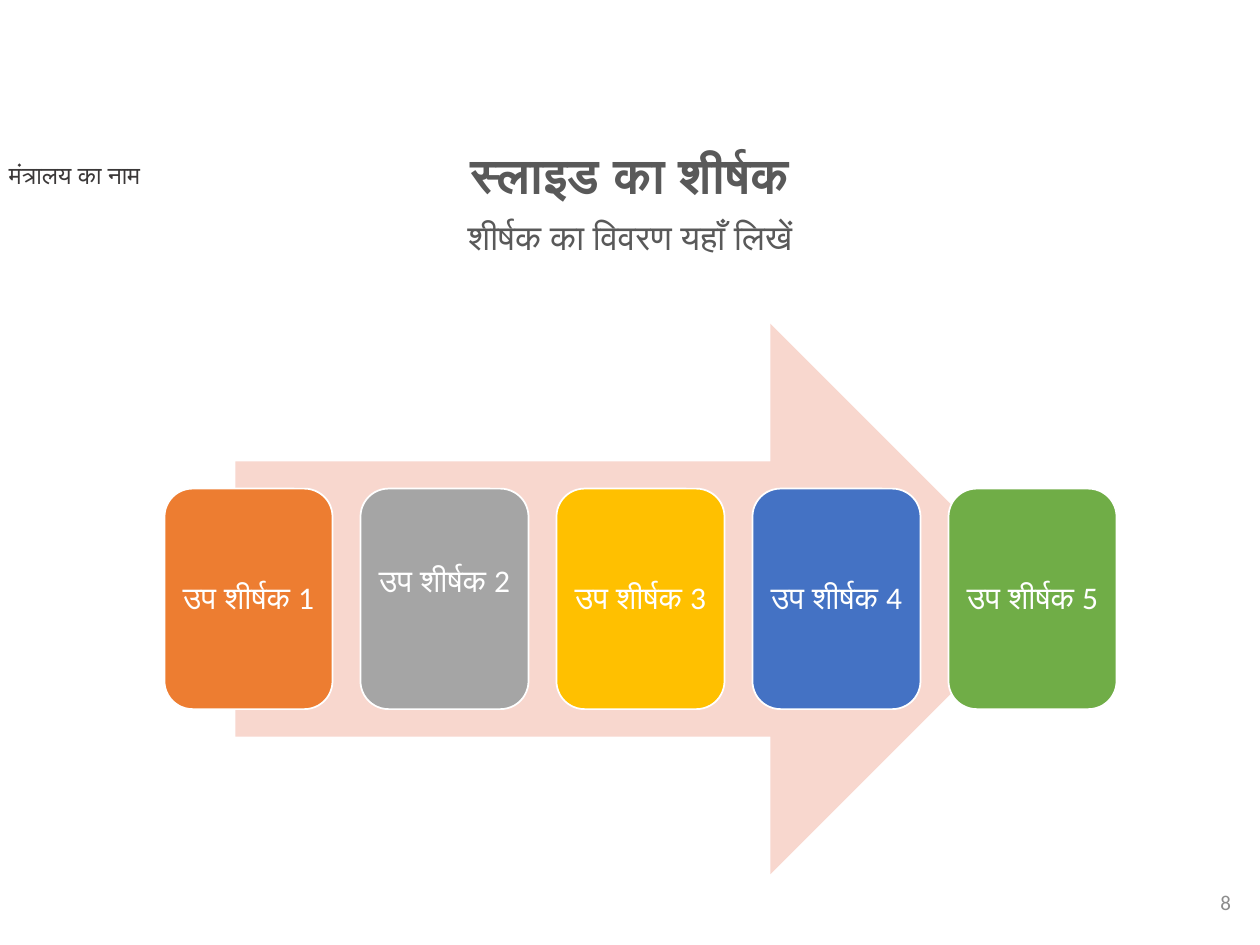
from pptx import Presentation
from pptx.dml.color import RGBColor
from pptx.enum import shapes, text
from pptx.util import Pt

WHITE = RGBColor(0xFF, 0xFF, 0xFF)
GREY = RGBColor(0x59, 0x59, 0x59)
DARK = RGBColor(0x3B, 0x38, 0x38)
PALE = RGBColor(0x8C, 0x8C, 0x8C)
PINK = RGBColor(0xF8, 0xD7, 0xCE)
FILLS = [
    RGBColor(0xED, 0x7D, 0x31),
    RGBColor(0xA5, 0xA5, 0xA5),
    RGBColor(0xFF, 0xC0, 0x00),
    RGBColor(0x44, 0x72, 0xC4),
    RGBColor(0x70, 0xAD, 0x47),
]
LEFT, CENTER, RIGHT = text.PP_ALIGN.LEFT, text.PP_ALIGN.CENTER, text.PP_ALIGN.RIGHT
TOP, MIDDLE = text.MSO_ANCHOR.TOP, text.MSO_ANCHOR.MIDDLE


def write(shape, words, size, color, align, anchor=TOP, space=1.0, bold=False):
    frame = shape.text_frame
    frame.text = words
    frame.word_wrap = True
    frame.auto_size = text.MSO_AUTO_SIZE.NONE
    frame.vertical_anchor = anchor
    para = frame.paragraphs[0]
    para.alignment = align
    para.line_spacing = space
    para.space_before = Pt(0)
    font = para.runs[0].font
    font.name = "Calibri"
    font.size = Pt(size)
    font.bold = bold
    font.color.rgb = color
    return frame


deck = Presentation()
deck.slide_width, deck.slide_height = Pt(720), Pt(540)
slide = deck.slides.add_slide(deck.slide_layouts[5])
items = slide.shapes

title = items.title
title.left, title.top, title.width, title.height = Pt(133.6), Pt(82.8), Pt(452.8), Pt(34)
write(title, "स्लाइड का शीर्षक", 28, GREY, CENTER, space=0.9, bold=True)

label = items.add_textbox(Pt(-2), Pt(88), Pt(157), Pt(24.5))
write(label, "मंत्रालय का नाम", 14, DARK, LEFT)

detail = items.add_textbox(Pt(105), Pt(122.4), Pt(510), Pt(45.4))
write(detail, "शीर्षक का विवरण यहाँ लिखें", 20, GREY, CENTER, space=0.9)

number = items.add_textbox(Pt(548.6), Pt(501), Pt(162), Pt(28.8))
write(number, "8", 12, PALE, RIGHT, MIDDLE)

arrow = items.add_shape(
    shapes.MSO_SHAPE.RIGHT_ARROW, Pt(134.5), Pt(185), Pt(463), Pt(314.6)
)
arrow.shadow.inherit = False
arrow.fill.solid()
arrow.fill.fore_color.rgb = PINK
arrow.line.fill.background()

for i, fill in enumerate(FILLS):
    card = items.add_shape(
        shapes.MSO_SHAPE.ROUNDED_RECTANGLE, Pt(94 + 112 * i), Pt(279.2), Pt(96), Pt(126)
    )
    card.shadow.inherit = False
    card.fill.solid()
    card.fill.fore_color.rgb = fill
    card.line.color.rgb = WHITE
    card.line.width = Pt(1)
    frame = write(card, f"उप शीर्षक {i + 1}", 18, WHITE, CENTER, MIDDLE, 0.9)
    frame.word_wrap = False
    frame.margin_left = frame.margin_right = frame.margin_top = Pt(5)
    frame.margin_bottom = Pt(24 if i == 1 else 5)

deck.save("out.pptx")
